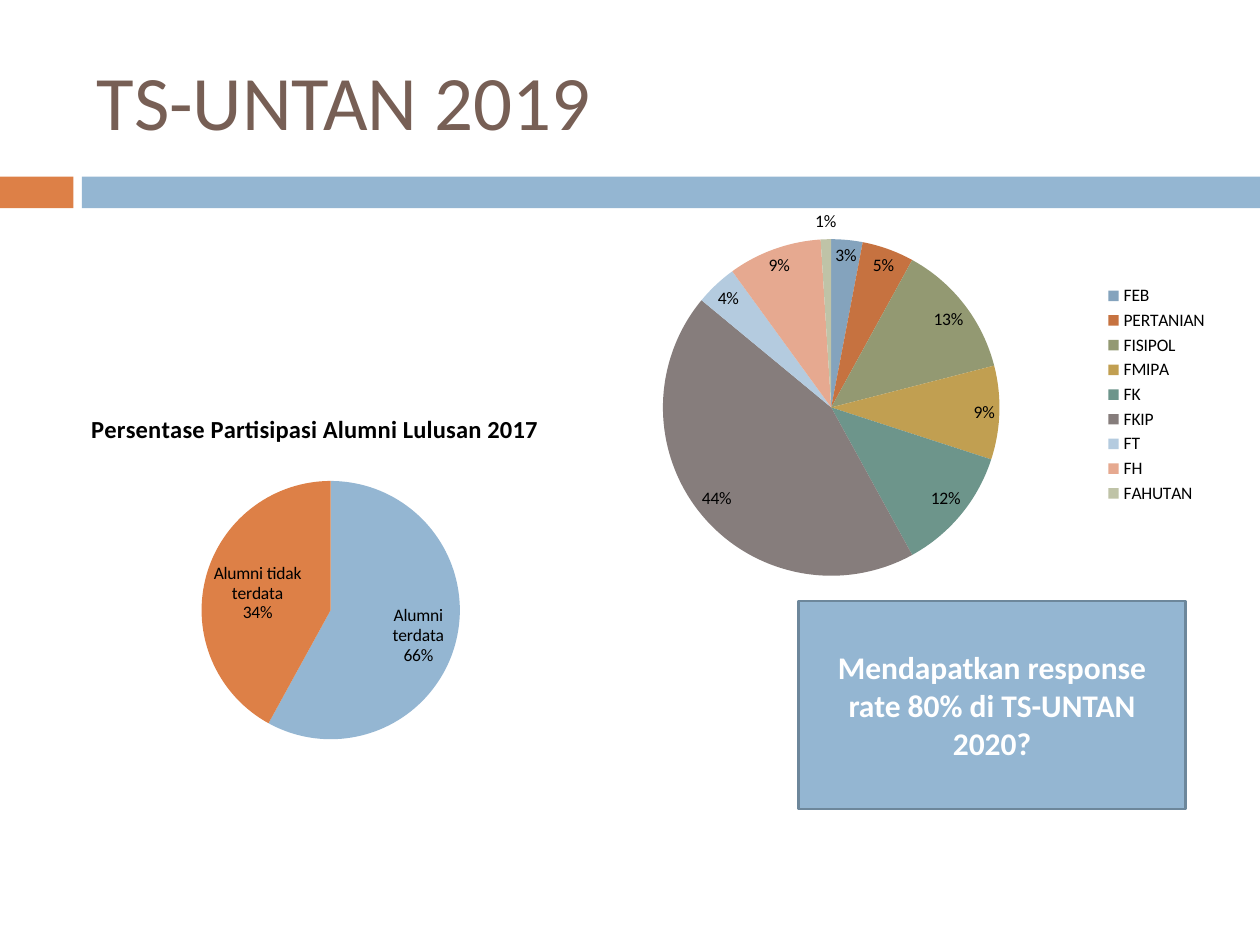
from dataclasses import dataclass
from typing import Any

from lxml.etree import SubElement
from pptx import Presentation
from pptx.chart.data import CategoryChartData
from pptx.dml.color import RGBColor
from pptx.enum.chart import XL_CHART_TYPE as ChartType
from pptx.enum.chart import XL_LABEL_POSITION as LabelPosition
from pptx.enum.chart import XL_LEGEND_POSITION as LegendPosition
from pptx.enum.shapes import MSO_SHAPE as Preset
from pptx.enum.text import MSO_ANCHOR as Anchor
from pptx.enum.text import PP_ALIGN as Align
from pptx.oxml.ns import qn
from pptx.util import Cm, Pt

BLUE, ORANGE, BROWN = "94B6D2", "DD8047", "775F55"
BLACK, WHITE, EDGE = "000000", "FFFFFF", "6D879B"


@dataclass
class Area:
    left: float
    top: float
    width: float
    height: float

    def lengths(self) -> list[Cm]:
        return [Cm(v) for v in (self.left, self.top, self.width, self.height)]


@dataclass
class Slice:
    name: str
    value: int
    color: str
    label: str = ""


@dataclass
class Pie:
    area: Area
    plot: Area
    slices: list[Slice]
    title: str = ""
    legend: bool = False


BARS = [
    (Area(0, 3.56, 1.48, 0.64), ORANGE),
    (Area(1.65, 3.56, 23.75, 0.64), BLUE),
]

PIES = [
    Pie(
        Area(0, 7.92, 12.7, 7.62),
        Area(0.32, 0.23, 0.41, 0.69),
        [
            Slice("Alumni terdata", 58, BLUE, "Alumni terdata\n66%"),
            Slice("Alumni tidak terdata", 42, ORANGE, "Alumni tidak terdata\n34%"),
        ],
        title="Persentase Partisipasi Alumni Lulusan 2017",
    ),
    Pie(
        Area(11.3, 3.94, 13.31, 8.03),
        Area(0.155, 0.11, 0.51, 0.845),
        [
            Slice("FEB", 3, "84A3BD"),
            Slice("PERTANIAN", 5, "C67240"),
            Slice("FISIPOL", 13, "939972"),
            Slice("FMIPA", 9, "C19F51"),
            Slice("FK", 12, "6D958B"),
            Slice("FKIP", 44, "867D7C"),
            Slice("FT", 4, "B4CBDF"),
            Slice("FH", 9, "E6A990"),
            Slice("FAHUTAN", 1, "BFC3A7"),
        ],
        legend=True,
    ),
]


def color_of(value: str) -> RGBColor:
    return RGBColor.from_string(value)


def apply(target: Any, values: dict[str, Any]) -> None:
    for name, value in values.items():
        setattr(target, name, value)


def format_font(font: Any, size: float, color: str, bold: bool = False) -> None:
    apply(font, {"name": "Calibri", "size": Pt(size), "bold": bold})
    font.color.rgb = color_of(color)


def draw_box(page: Any, area: Area, fill: str) -> Any:
    box = page.shapes.add_shape(Preset.RECTANGLE, *area.lengths())
    box.shadow.inherit = False
    box.fill.solid()
    box.fill.fore_color.rgb = color_of(fill)
    box.line.fill.background()
    return box


def write_text(box: Any, text: str, align: Align, size: float, color: str,
               bold: bool = False) -> None:
    apply(box.text_frame, {"word_wrap": True, "vertical_anchor": Anchor.MIDDLE})
    para = box.text_frame.paragraphs[0]
    para.alignment = align
    span = para.add_run()
    span.text = text
    format_font(span.font, size, color, bold)


def place_plot(chart: Any, plot: Area) -> None:
    plot_area = chart._chartSpace.chart.plotArea
    for old in plot_area.findall(qn("c:layout")):
        plot_area.remove(old)
    layout = SubElement(plot_area, qn("c:layout"))
    plot_area.insert(0, layout)
    manual = SubElement(layout, qn("c:manualLayout"))
    settings = {
        "layoutTarget": "inner", "xMode": "edge", "yMode": "edge",
        "x": plot.left, "y": plot.top, "w": plot.width, "h": plot.height,
    }
    for name, value in settings.items():
        SubElement(manual, qn(f"c:{name}")).set("val", str(value))


def draw_pie(page: Any, pie: Pie) -> None:
    data = CategoryChartData()
    data.categories = [part.name for part in pie.slices]
    data.add_series("Series 1", [part.value for part in pie.slices])
    frame = page.shapes.add_chart(ChartType.PIE, *pie.area.lengths(), data)
    chart = frame.chart
    format_font(chart.font, 10, BLACK)
    apply(chart, {"has_title": bool(pie.title), "has_legend": pie.legend})
    if pie.title:
        chart.title_format = None
        span = chart.chart_title.text_frame.paragraphs[0].add_run()
        span.text = pie.title
        format_font(span.font, 14, BLACK, True)
    if pie.legend:
        apply(chart.legend, {"position": LegendPosition.RIGHT,
                             "include_in_layout": False})
    place_plot(chart, pie.plot)

    plot = chart.plots[0]
    apply(plot, {"vary_by_categories": True, "has_data_labels": True})
    series = plot.series[0]
    labels = series.data_labels
    apply(labels, {
        "show_percentage": True,
        "show_value": False,
        "show_category_name": any(part.label for part in pie.slices),
        "position": LabelPosition.BEST_FIT,
    })
    format_font(labels.font, 10, BLACK)
    for index, part in enumerate(pie.slices):
        point = series.points[index]
        point.format.fill.solid()
        point.format.fill.fore_color.rgb = color_of(part.color)
        if part.label:
            label = point.data_label
            label.text_frame.text = part.label
            label.position = LabelPosition.BEST_FIT
            for para in label.text_frame.paragraphs:
                for span in para.runs:
                    format_font(span.font, 10, BLACK)


def main() -> None:
    deck = Presentation()
    apply(deck, {"slide_width": Cm(25.4), "slide_height": Cm(19.05)})
    page = deck.slides.add_slide(deck.slide_layouts[5])
    for area, fill in BARS:
        draw_box(page, area, fill)

    title = page.shapes.title
    places = Area(1.7, 0.64, 22.66, 2.74).lengths()
    apply(title, dict(zip(("left", "top", "width", "height"), places)))
    write_text(title, "TS-UNTAN 2019", Align.LEFT, 44, BROWN)

    for pie in PIES:
        draw_pie(page, pie)

    target = draw_box(page, Area(16.1, 12.12, 7.8, 4.19), BLUE)
    target.line.color.rgb = color_of(EDGE)
    target.line.width = Pt(1.5)
    write_text(target, "Mendapatkan response rate 80% di TS-UNTAN 2020?",
               Align.CENTER, 18, WHITE, True)
    deck.save("out.pptx")


if __name__ == "__main__":
    main()
